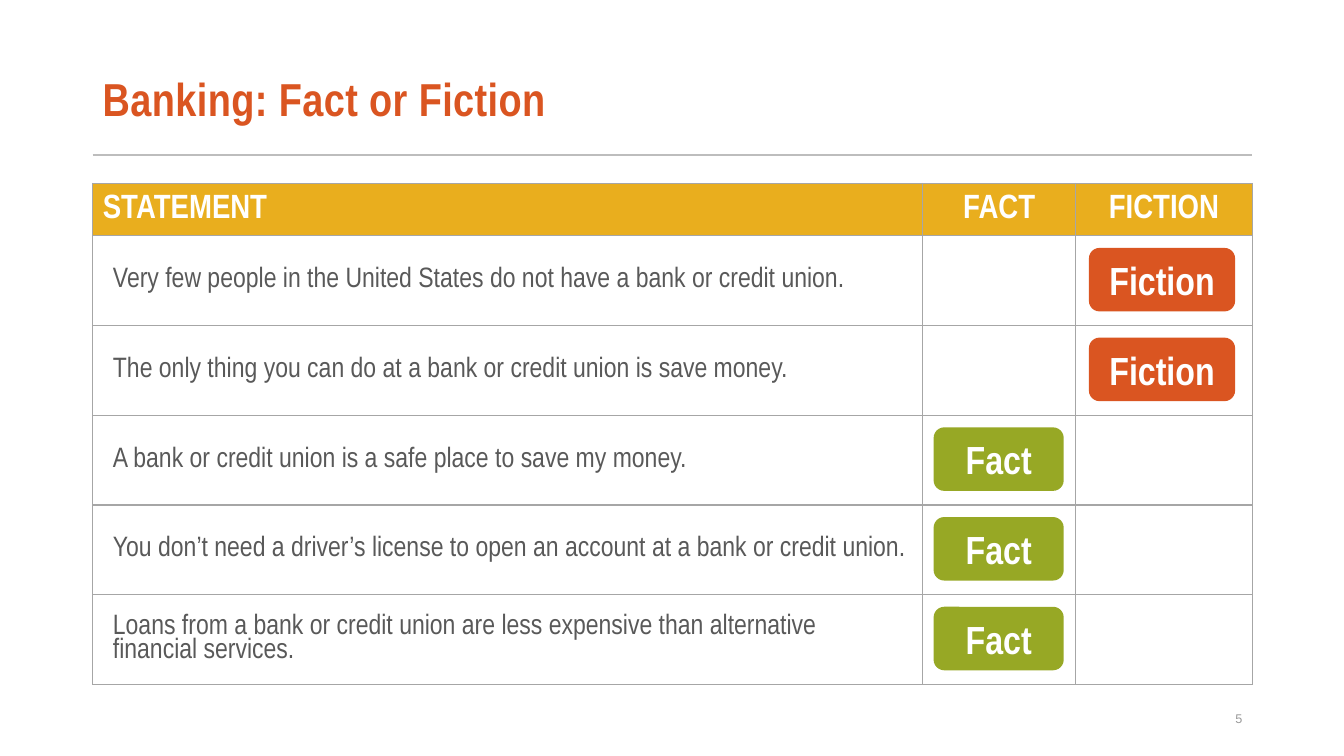
from typing import NamedTuple

from lxml import etree
from pptx import Presentation
from pptx.dml.color import RGBColor
from pptx.enum import shapes, text
from pptx.oxml import ns
from pptx.util import Inches, Pt

ORANGE = RGBColor(0xDA, 0x55, 0x21)
GREEN = RGBColor(0x97, 0xA8, 0x25)
GOLD = RGBColor(0xE9, 0xAE, 0x1E)
WHITE = RGBColor(0xFF, 0xFF, 0xFF)
BODY_GRAY = RGBColor(0x59, 0x59, 0x59)
BORDER_GRAY = RGBColor(0xA6, 0xA6, 0xA6)
RULE_GRAY = RGBColor(0xBD, 0xBD, 0xBD)
NUMBER_GRAY = RGBColor(0x9A, 0x9A, 0x9A)

NARROW = "Arial Narrow"
LEFT, WIDTH = 0.92, 11.5
TABLE_TOP, HEADER_HEIGHT, ROW_HEIGHT = 1.82, 0.52, 0.89
TABLE_SPACING = 0.9
COLUMN_WIDTHS = (8.23, 1.52, 1.75)
HEADERS = ("STATEMENT", "FACT", "FICTION")
BADGE_TOP, BADGE_HEIGHT = 2.46, 0.63


class Verdict(NamedTuple):
    label: str
    left: float
    width: float
    color: RGBColor


class Statement(NamedTuple):
    wording: str
    verdict: Verdict


FACT = Verdict("Fact", 9.26, 1.29, GREEN)
FICTION = Verdict("Fiction", 10.8, 1.45, ORANGE)

STATEMENTS = (
    Statement("Very few people in the United States do not have a bank or credit union.", FICTION),
    Statement("The only thing you can do at a bank or credit union is save money.", FICTION),
    Statement("A bank or credit union is a safe place to save my money.", FACT),
    Statement("You don’t need a driver’s license to open an account at a bank or credit union.", FACT),
    Statement("Loans from a bank or credit union are less expensive than alternative\v"
              "financial services.", FACT),
)


def write(tf, wording: str, size: float, color: RGBColor, font: str = NARROW,
          bold: bool = False, align=text.PP_ALIGN.LEFT, spacing: float = 1.0):
    tf.text = wording
    tf.word_wrap = True
    p = tf.paragraphs[0]
    p.alignment = align
    p.line_spacing = spacing
    p.font.size = Pt(size)
    p.font.name = font
    p.font.bold = bold
    p.font.color.rgb = color
    return p


def add_text(slide, left: float, top: float, width: float, height: float):
    tf = slide.shapes.add_textbox(*map(Inches, (left, top, width, height))).text_frame
    tf.vertical_anchor = text.MSO_ANCHOR.MIDDLE
    return tf


def add_rule(slide) -> None:
    """Draw the thin line under the title."""
    y = Inches(1.54)
    rule = slide.shapes.add_connector(
        shapes.MSO_CONNECTOR.STRAIGHT, Inches(LEFT), y, Inches(LEFT + WIDTH), y)
    rule.line.color.rgb = RULE_GRAY
    rule.line.width = Pt(1.5)
    etree.SubElement(rule._element.spPr, ns.qn("a:effectLst"))


def style_cell(cell, fill: RGBColor) -> None:
    """Set borders, fill and anchor; the borders must come before the fill."""
    tc_pr = cell._tc.get_or_add_tcPr()
    for side in ("lnL", "lnR", "lnT", "lnB"):
        ln = etree.SubElement(tc_pr, ns.qn(f"a:{side}"), w=str(Pt(1)))
        solid = etree.SubElement(ln, ns.qn("a:solidFill"))
        etree.SubElement(solid, ns.qn("a:srgbClr"), val=str(BORDER_GRAY))
    cell.fill.solid()
    cell.fill.fore_color.rgb = fill
    cell.vertical_anchor = text.MSO_ANCHOR.MIDDLE


def add_statement_table(slide) -> None:
    height = HEADER_HEIGHT + ROW_HEIGHT * len(STATEMENTS)
    table = slide.shapes.add_table(
        len(STATEMENTS) + 1, len(HEADERS),
        *map(Inches, (LEFT, TABLE_TOP, WIDTH, height))).table
    for column, width in zip(table.columns, COLUMN_WIDTHS):
        column.width = Inches(width)
    for i, row in enumerate(table.rows):
        row.height = Inches(ROW_HEIGHT if i else HEADER_HEIGHT)
        for cell in row.cells:
            style_cell(cell, WHITE if i else GOLD)
    for i, header in enumerate(HEADERS):
        align = text.PP_ALIGN.CENTER if i else text.PP_ALIGN.LEFT
        write(table.cell(0, i).text_frame, header, 24, WHITE,
              bold=True, align=align, spacing=TABLE_SPACING)
    for i, statement in enumerate(STATEMENTS, 1):
        cell = table.cell(i, 0)
        cell.margin_left = Inches(0.2)
        write(cell.text_frame, statement.wording, 20, BODY_GRAY, spacing=TABLE_SPACING)


def add_badge(slide, verdict: Verdict, top: float) -> None:
    sp = slide.shapes.add_shape(
        shapes.MSO_SHAPE.ROUNDED_RECTANGLE,
        *map(Inches, (verdict.left, top, verdict.width, BADGE_HEIGHT)))
    sp.shadow.inherit = False
    sp.fill.solid()
    sp.fill.fore_color.rgb = verdict.color
    sp.line.fill.background()
    sp.text_frame.vertical_anchor = text.MSO_ANCHOR.MIDDLE
    write(sp.text_frame, verdict.label, 28, WHITE, bold=True, align=text.PP_ALIGN.CENTER)


def main() -> None:
    prs = Presentation()
    prs.slide_width, prs.slide_height = Inches(13.33), Inches(7.5)
    slide = prs.slides.add_slide(prs.slide_layouts[6])

    add_rule(slide)
    title = write(add_text(slide, LEFT, 0.54, WIDTH, 0.95), "Banking: Fact or Fiction",
                  33, ORANGE, bold=True, spacing=0.87)
    title.runs[0]._r.get_or_add_rPr().set("spc", "30")
    write(add_text(slide, 9.42, 6.93, 3, 0.4), "5", 9, NUMBER_GRAY,
          font="Arial", align=text.PP_ALIGN.RIGHT)
    add_statement_table(slide)
    for i, statement in enumerate(STATEMENTS):
        add_badge(slide, statement.verdict, BADGE_TOP + i * ROW_HEIGHT)

    prs.save("out.pptx")


if __name__ == "__main__":
    main()
